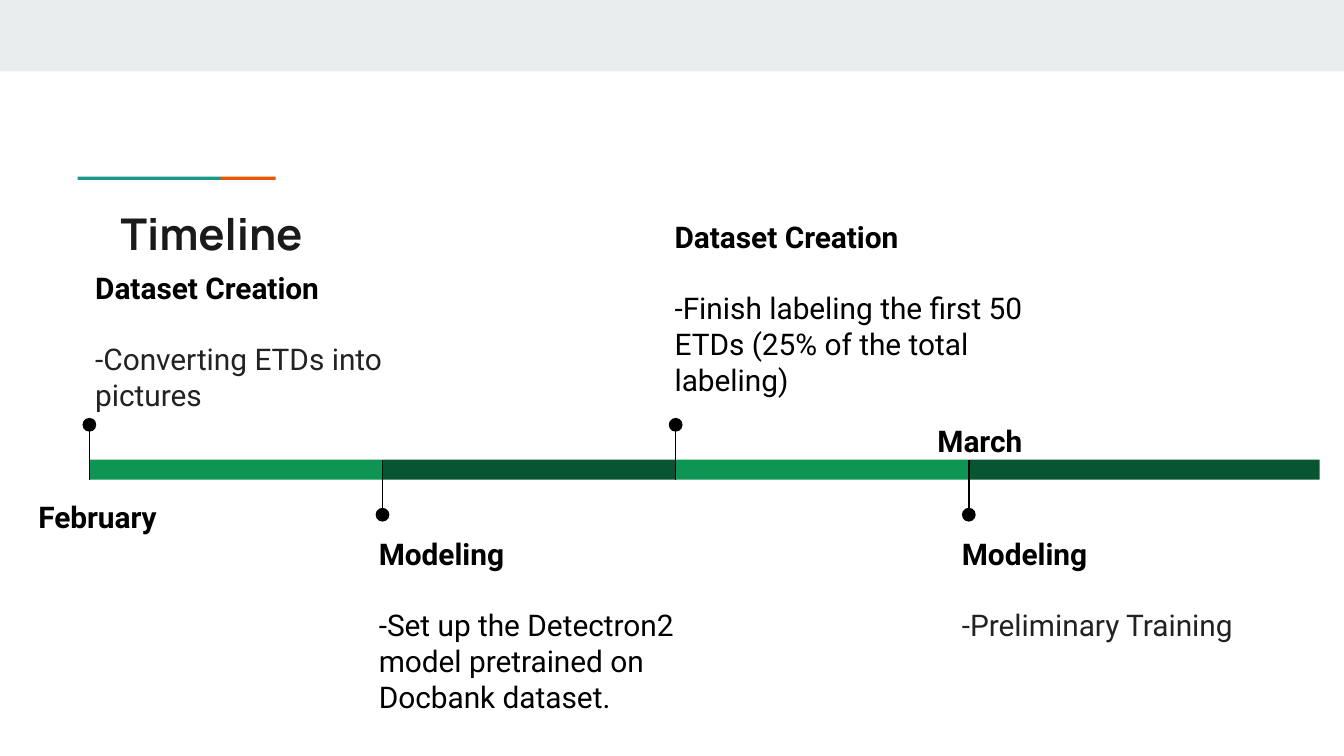
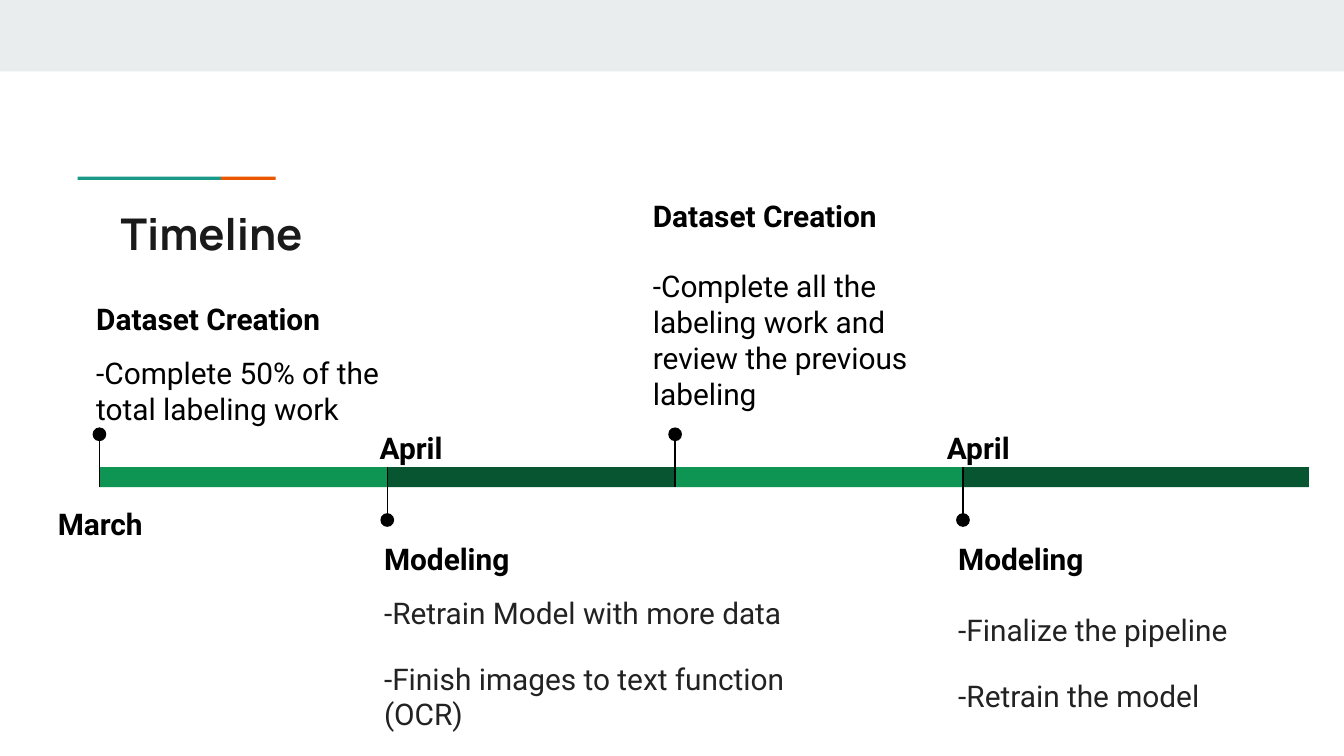
from dataclasses import dataclass

from lxml import etree
from pptx import Presentation
from pptx.dml.color import RGBColor
from pptx.enum.shapes import MSO_CONNECTOR, MSO_SHAPE
from pptx.enum.text import MSO_ANCHOR, PP_ALIGN
from pptx.oxml.ns import qn
from pptx.util import Cm, Pt


@dataclass(frozen=True)
class Theme:
    band: str = "E9EDEE"
    teal: str = "1A9988"
    orange: str = "EB5600"
    title: str = "1A1A1A"
    black: str = "000000"
    gray: str = "222222"
    bars: tuple = ("0E9453", "085631")
    title_font: str = "Manrope"
    body_font: str = "Roboto"
    title_size: float = 23.4
    body_size: float = 16


THEME = Theme()
WIDTH, HEIGHT = 25.4, 14.29
INSET = 0.25
BAR_HEIGHT = 0.38
DOT = 0.26
MONTH_HEIGHT = 1.05
FULL_GAP, HALF_GAP = 18.75, 9.4  # points between a heading and its tasks

# Lengths are in centimetres. Note boxes: left, top, width, height.
# Months: name, left, width.
TIMELINES = [
    {
        "start": 1.69, "step": 5.54, "end": 24.94, "top": 8.69, "stem": 1.04,
        "milestones": [
            {"heading": "Dataset Creation", "box": (1.55, 4.85, 6.38, 2.72),
             "tasks": ["-Converting ETDs into pictures"],
             "color": THEME.gray, "month": ("February", 0.46, 2.77)},
            {"heading": "Modeling", "box": (6.91, 9.88, 6.38, 2.72),
             "tasks": ["-Set up the Detectron2 model pretrained on Docbank dataset."]},
            {"heading": "Dataset Creation", "box": (12.5, 3.89, 7.92, 3.99),
             "tasks": ["-Finish labeling the first 50 ETDs (25% of the total labeling)"]},
            {"heading": "Modeling", "box": (17.93, 9.88, 7.06, 2.72),
             "tasks": ["-Preliminary Training"],
             "color": THEME.gray, "month": ("March", 17.25, 2.54)},
        ],
    },
    {
        "start": 1.88, "step": 5.44, "end": 24.74, "top": 8.83, "stem": 1.0,
        "milestones": [
            {"heading": "Dataset Creation", "box": (1.57, 5.44, 6.25, 2.62),
             "tasks": ["-Complete 50% of the total labeling work"],
             "gap": HALF_GAP, "month": ("March", 0.69, 2.41)},
            {"heading": "Modeling", "box": (7.01, 9.98, 8.1, 4.14),
             "tasks": ["-Retrain Model with more data",
                       "-Finish images to text function (OCR)"],
             "color": THEME.gray, "gap": HALF_GAP, "month": ("April", 6.32, 2.9)},
            {"heading": "Dataset Creation", "box": (12.09, 3.48, 6.25, 2.62),
             "tasks": ["-Complete all the labeling work and review the previous labeling"]},
            {"heading": "Modeling", "box": (17.86, 9.98, 7.57, 4.47),
             "tasks": ["-Finalize the pipeline", "-Retrain the model"],
             "color": THEME.gray, "month": ("April", 17.17, 2.64)},
        ],
    },
]


def add_block(slide, left, top, width, height, color, kind=MSO_SHAPE.RECTANGLE):
    shape = slide.shapes.add_shape(kind, Cm(left), Cm(top), Cm(width), Cm(height))
    shape.shadow.inherit = False
    shape.fill.solid()
    shape.fill.fore_color.rgb = RGBColor.from_string(color)
    shape.line.fill.background()


def set_font(paragraph, color, bold, size=THEME.body_size, name=THEME.body_font):
    font = paragraph.font
    font.name, font.size, font.bold = name, Pt(size), bold
    font.color.rgb = RGBColor.from_string(color)


def set_frame(frame, wrap=True):
    frame.word_wrap = wrap
    frame.vertical_anchor = MSO_ANCHOR.TOP
    frame.margin_left = frame.margin_right = Cm(INSET)
    frame.margin_top = frame.margin_bottom = Cm(INSET)


def add_text_frame(slide, left, top, width, height, wrap=True):
    box = slide.shapes.add_textbox(Cm(left), Cm(top), Cm(width), Cm(height))
    set_frame(box.text_frame, wrap)
    return box.text_frame


def add_title_slide(presentation, text):
    slide = presentation.slides.add_slide(presentation.slide_layouts[5])
    add_block(slide, 0, 0, WIDTH, 1.35, THEME.band)
    add_block(slide, 1.47, 3.34, 2.71, 0.06, THEME.teal)
    add_block(slide, 4.18, 3.34, 1.03, 0.06, THEME.orange)
    title = slide.shapes.title
    title.left, title.top, title.width, title.height = Cm(2.03), Cm(3.66), Cm(21.36), Cm(1.5)
    title.text_frame.text = text
    set_frame(title.text_frame)
    paragraph = title.text_frame.paragraphs[0]
    paragraph.alignment = PP_ALIGN.LEFT
    set_font(paragraph, THEME.title, True, THEME.title_size, THEME.title_font)
    return slide


def add_pin(slide, x, base, tip):
    """Draw a stem from the bar edge to a dot at its tip."""
    stem = slide.shapes.add_connector(MSO_CONNECTOR.STRAIGHT, Cm(x), Cm(tip), Cm(x), Cm(base))
    stem.line.color.rgb = RGBColor.from_string(THEME.black)
    stem.line.width = Pt(0.75)
    properties = stem._element.find(qn("p:spPr"))
    etree.SubElement(properties, qn("a:effectLst"))
    add_block(slide, x - DOT / 2, tip - DOT / 2, DOT, DOT, THEME.black, MSO_SHAPE.OVAL)


def add_note(slide, milestone):
    frame = add_text_frame(slide, *milestone["box"])
    heading = frame.paragraphs[0]
    heading.text = milestone["heading"]
    heading.space_after = Pt(milestone.get("gap", FULL_GAP))
    set_font(heading, THEME.black, True)
    for index, task in enumerate(milestone["tasks"]):
        paragraph = frame.add_paragraph()
        paragraph.text = task
        paragraph.space_before = Pt(16 if index else 0)
        set_font(paragraph, milestone.get("color", THEME.black), False)


def add_month(slide, name, left, width, top):
    frame = add_text_frame(slide, left, top, width, MONTH_HEIGHT, wrap=False)
    paragraph = frame.paragraphs[0]
    paragraph.text = name
    paragraph.alignment = PP_ALIGN.CENTER
    paragraph.line_spacing = 1.15
    set_font(paragraph, THEME.black, True)


def add_timeline(slide, timeline):
    top, stem = timeline["top"], timeline["stem"]
    bottom = top + BAR_HEIGHT
    milestones = timeline["milestones"]
    starts = [timeline["start"] + i * timeline["step"] for i in range(len(milestones))]
    ends = starts[1:] + [timeline["end"]]
    for index, (left, right) in enumerate(zip(starts, ends)):
        add_block(slide, left, top, right - left, BAR_HEIGHT, THEME.bars[index % 2])
    for index, (x, milestone) in enumerate(zip(starts, milestones)):
        if index % 2:
            add_pin(slide, x, top, top + stem)
        else:
            add_pin(slide, x, bottom, bottom - stem)
        add_note(slide, milestone)
        if "month" in milestone:
            month_top = top - MONTH_HEIGHT if index else bottom
            add_month(slide, *milestone["month"], month_top)


def main():
    presentation = Presentation()
    presentation.slide_width, presentation.slide_height = Cm(WIDTH), Cm(HEIGHT)
    for timeline in TIMELINES:
        add_timeline(add_title_slide(presentation, "Timeline"), timeline)
    presentation.save("out.pptx")


if __name__ == "__main__":
    main()
